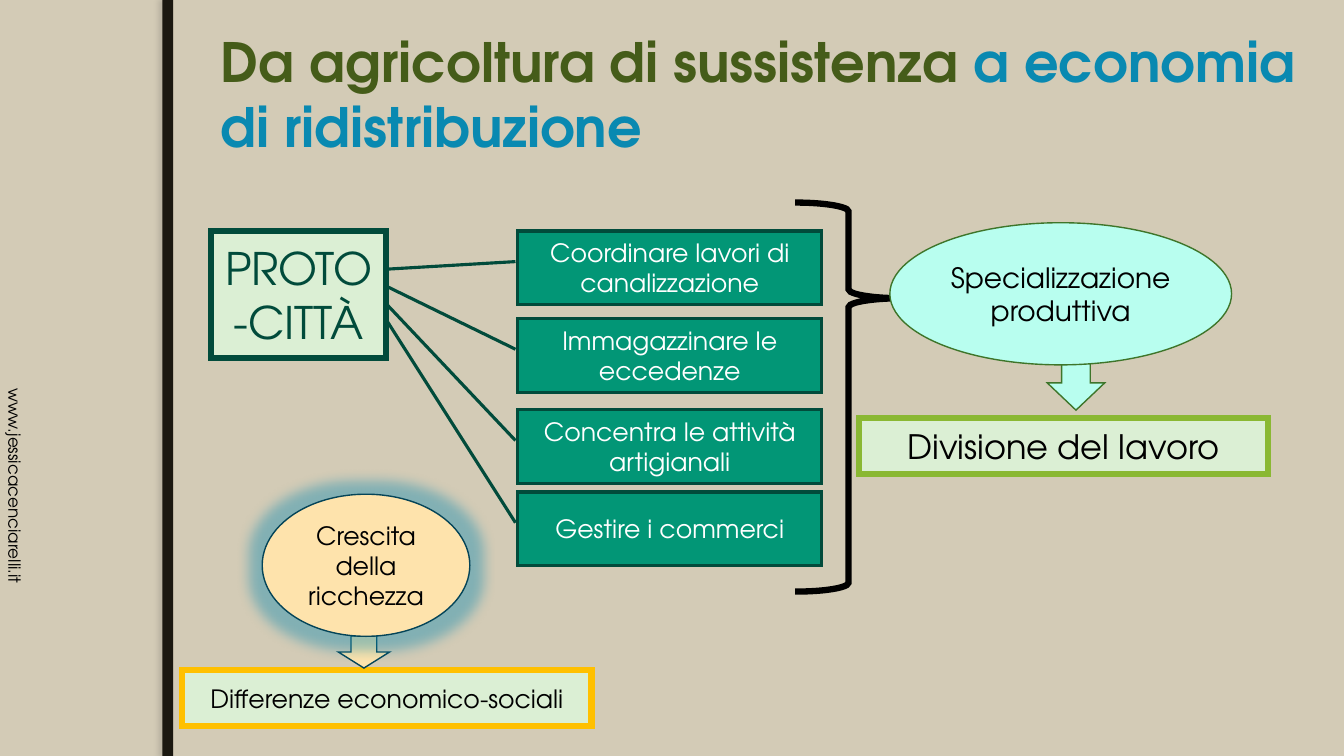
from collections import namedtuple

from lxml import etree
from pptx import Presentation
from pptx.dml.color import RGBColor
from pptx.enum.shapes import MSO_SHAPE as Shape
from pptx.enum.text import MSO_ANCHOR as Anchor, MSO_AUTO_SIZE as AutoSize, PP_ALIGN as Align
from pptx.oxml.ns import qn
from pptx.util import Pt

FONT = "TeX Gyre Adventor"
BLACK, WHITE, PINE, MINT, AQUA = "000000", "FFFFFF", "014B3B", "DBEFD4", "B8FEEF"

Box = namedtuple("Box", "left top width height")
Outcome = namedtuple("Outcome", "cause cause_size result result_size fill line frame")


def color(value):
    return RGBColor.from_string(value)


def write(frame, runs, size, align=Align.CENTER, bold=False):
    """Fill the first paragraph with (text, colour) runs."""
    frame.vertical_anchor = Anchor.MIDDLE
    para = frame.paragraphs[0]
    para.alignment = align
    for text, ink in runs:
        span = para.add_run()
        span.text = text
        span.font.name = FONT
        span.font.size = Pt(size)
        span.font.bold = bold
        span.font.color.rgb = color(ink)


def add_figure(slide, kind, box, fill=None, line=None, weight=1):
    figure = slide.shapes.add_shape(kind, *map(Pt, box))
    figure.shadow.inherit = False
    if fill:
        figure.fill.solid()
        figure.fill.fore_color.rgb = color(fill)
    else:
        figure.fill.background()
    if line:
        figure.line.color.rgb = color(line)
        figure.line.width = Pt(weight)
        etree.SubElement(figure.element.spPr.find(qn("a:ln")), qn("a:miter"), lim="800000")
    else:
        figure.line.fill.background()
    return figure


def add_effect(figure, tag, ink, alpha, **attributes):
    """Put one effect, such as a glow, in the shape's effect list."""
    effects = figure.element.spPr.find(qn("a:effectLst"))
    effect = etree.SubElement(effects, qn(tag))
    for name, value in attributes.items():
        effect.set(name, str(value))
    tint = etree.SubElement(effect, qn("a:srgbClr"), val=ink)
    etree.SubElement(tint, qn("a:alpha"), val=str(alpha * 1000))


def draw_backdrop(slide, box):
    slide.background.fill.solid()
    slide.background.fill.fore_color.rgb = color("D3CBB6")
    bar = add_figure(slide, Shape.RECTANGLE,
                     Box(box.left + 116, box.top, 7.7, box.height), "1B1810")
    add_effect(bar, "a:outerShdw", "716E67", 25, blurRad=Pt(3), dist=Pt(3),
               dir=180 * 60000, rotWithShape=0)

    address = slide.shapes.add_textbox(*map(Pt, (box.left, box.top + 270, 21.6, 164.2)))
    frame = address.text_frame
    frame.word_wrap = True
    frame.margin_left = frame.margin_right = Pt(3.6)
    frame.margin_top = frame.margin_bottom = Pt(7.2)
    write(frame, [("www.jessicacenciarelli.it", BLACK)], 12, Align.LEFT)
    address.element.txBody.find(qn("a:bodyPr")).set("vert", "vert")


def draw_title(slide, box):
    title = slide.shapes.title
    title.left, title.top, title.width, title.height = map(Pt, box)
    title.text_frame.auto_size = AutoSize.NONE
    title.text_frame.word_wrap = True
    write(title.text_frame, [("Da agricoltura di sussistenza ", "455C19"),
                             ("a economia di ridistribuzione", "0989B1")],
          38.7, Align.LEFT, bold=True)


def draw_city_tasks(slide, box):
    """Draw the city, its tasks and the leader lines that meet inside the city."""
    hub_x, hub_y = box.left + 103, box.top + 28.6
    task_width, task_height = 217.4, 52.6
    task_left = box.left + box.width - task_width
    tasks = [(0, "Coordinare lavori di canalizzazione"),
             (62.6, "Immagazzinare le eccedenze"),
             (127.8, "Concentra le attività artigianali"),
             (186.5, "Gestire i commerci")]
    for offset, text in tasks:
        top = box.top + offset
        task = add_figure(slide, Shape.LINE_CALLOUT_1,
                          Box(task_left, top, task_width, task_height),
                          "029676", PINE, 2.25)
        leader = ((hub_y - top) / task_height, (hub_x - task_left) / task_width, 0.416, -0.007)
        for index, value in enumerate(leader):
            task.adjustments[index] = value
        write(task.text_frame, [(text, WHITE)], 18)

    city = add_figure(slide, Shape.RECTANGLE, Box(box.left, box.top, 125.3, 90.7),
                      MINT, PINE, 4.5)
    write(city.text_frame, [("PROTO-CITTÀ", PINE)], 32)


def draw_brace(slide, box):
    brace = add_figure(slide, Shape.RIGHT_BRACE, box, line=BLACK, weight=4.5)
    brace.adjustments[0] = 0.083
    brace.adjustments[1] = 0.246


def draw_outcome(slide, box, outcome, oval, arrow):
    """Stack oval, arrow and framed result; oval and arrow are relative to the box."""
    place = [part._replace(left=box.left + part.left, top=box.top + part.top)
             for part in (oval, arrow)]
    result_height = 39.6
    result = add_figure(slide, Shape.RECTANGLE,
                        Box(box.left, box.top + box.height - result_height,
                            box.width, result_height),
                        MINT, outcome.frame, 4.5)
    write(result.text_frame, [(outcome.result, BLACK)], outcome.result_size)
    add_figure(slide, Shape.DOWN_ARROW, place[1], outcome.fill, outcome.line)
    cause = add_figure(slide, Shape.OVAL, place[0], outcome.fill, outcome.line)
    write(cause.text_frame, [(outcome.cause, BLACK)], outcome.cause_size)
    return cause


def main():
    deck = Presentation()
    deck.slide_width, deck.slide_height = Pt(960), Pt(540)
    slide = deck.slides.add_slide(deck.slide_layouts[5])

    draw_backdrop(slide, Box(0, 0, 960, 540))
    draw_title(slide, Box(150.5, 21.6, 787, 90))
    draw_city_tasks(slide, Box(150.7, 165, 436.4, 239.1))
    draw_brace(slide, Box(568, 144.7, 76.3, 277.9))

    labour = Outcome("Specializzazione produttiva", 20, "Divisione del lavoro", 24,
                     AQUA, "3E752A", "8AB833")
    draw_outcome(slide, Box(613.4, 159.1, 292.3, 179.3), labour,
                 Box(22.2, 0, 244.1, 101.5), Box(134.7, 95, 41, 38.9))

    wealth = Outcome("Crescita della ricchezza", 18, "Differenze economico-sociali", 18,
                     "FEE3AC", "044458", "FFC000")
    growth = draw_outcome(slide, Box(130.2, 353, 292.3, 165.4), wealth,
                          Box(57.1, 0, 148.3, 101.5), Box(111.4, 101.2, 36.7, 23))
    add_effect(growth, "a:glow", "0989B1", 40, rad=Pt(18))

    deck.save("out.pptx")


if __name__ == "__main__":
    main()
